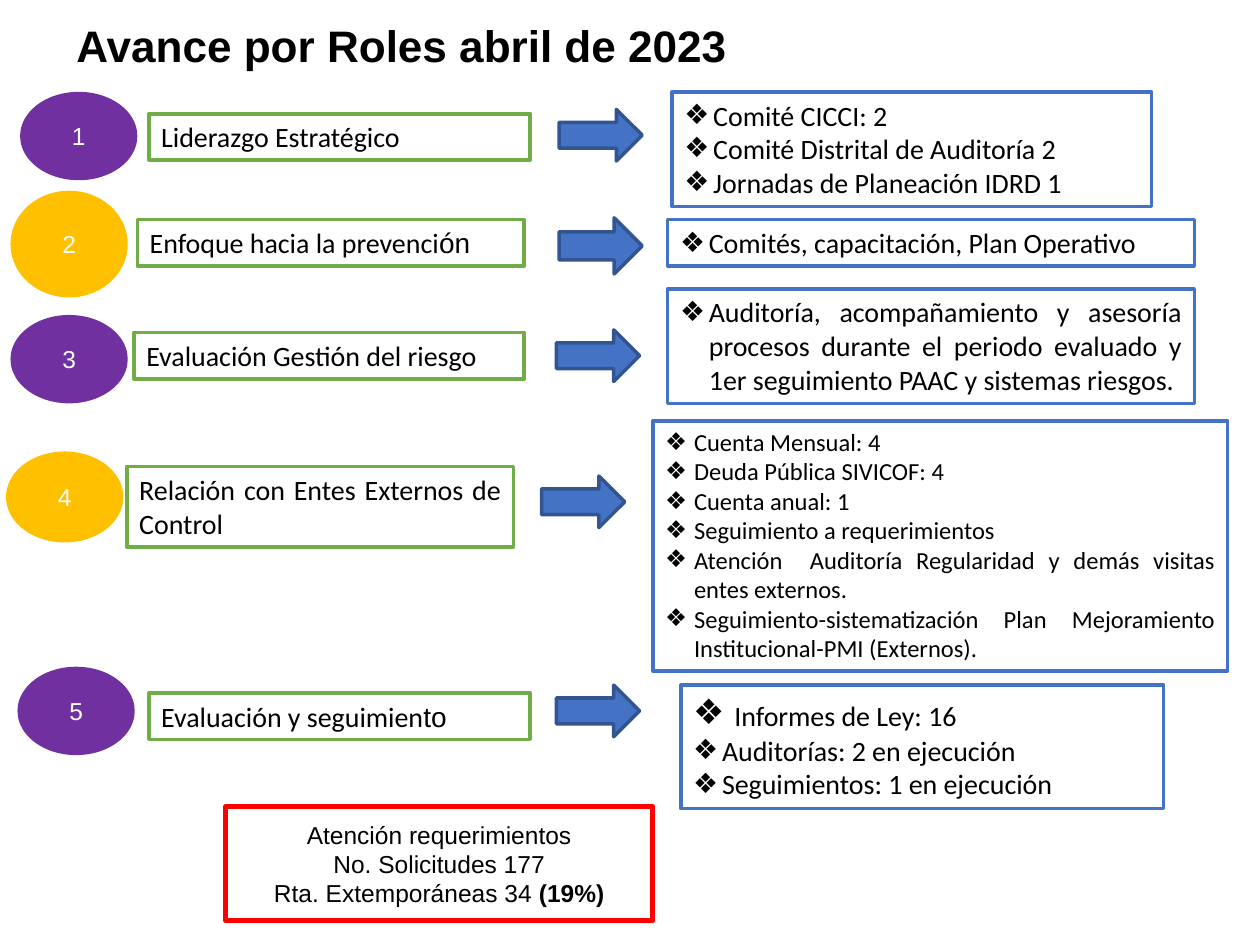
from lxml import etree
from pptx import Presentation
from pptx.dml.color import RGBColor
from pptx.enum.shapes import MSO_SHAPE
from pptx.enum.text import MSO_ANCHOR, MSO_AUTO_SIZE, PP_ALIGN
from pptx.oxml.ns import qn
from pptx.util import Pt

OVAL, RECT, ARROW = MSO_SHAPE.OVAL, MSO_SHAPE.RECTANGLE, MSO_SHAPE.RIGHT_ARROW
TOP, MIDDLE = MSO_ANCHOR.TOP, MSO_ANCHOR.MIDDLE
CENTER, JUSTIFY = PP_ALIGN.CENTER, PP_ALIGN.JUSTIFY

BLACK = RGBColor(0x00, 0x00, 0x00)
WHITE = RGBColor(0xFF, 0xFF, 0xFF)
PURPLE = RGBColor(0x70, 0x30, 0xA0)
GOLD = RGBColor(0xFF, 0xC0, 0x00)
GREEN = RGBColor(0x70, 0xAD, 0x47)
BLUE = RGBColor(0x44, 0x72, 0xC4)
NAVY = RGBColor(0x32, 0x54, 0x91)
RED = RGBColor(0xFF, 0x00, 0x00)

# Content: a paragraph is a string, or a list of (text, font changes) runs
TITLE = "Avance por Roles abril de 2023"
ARIAL = {"name": "Arial"}
ROLES = [
    {"oval": (11.5, 52.5, 67, 50.5), "box": (85, 65, 218, 26.5),
     "arrow": (319.5, 62.5, 47.5, 29.5), "list": (384, 52.5, 274, 65.5),
     "role": "Liderazgo Estratégico", "size": 16,
     "items": ["Comité CICCI: 2", "Comité Distrital de Auditoría 2",
               "Jornadas de Planeación IDRD 1"]},
    {"oval": (6, 109, 67, 61), "box": (78.5, 125.5, 221, 26.5),
     "arrow": (319.5, 124.5, 47.5, 32), "list": (381.5, 125.5, 301, 26.5),
     "role": [("Enfoque hacia la prevenci", {}), ("ón", ARIAL)], "size": 16,
     "items": ["Comités, capacitación, Plan Operativo"]},
    {"oval": (6, 180, 67, 50.5), "box": (76.5, 190, 223, 26.5),
     "arrow": (318, 188.5, 47.5, 29.5), "list": (381.5, 165, 301, 65.5),
     "role": "Evaluación Gestión del riesgo", "size": 16,
     "items": ["Auditoría, acompañamiento y asesoría procesos durante el "
               "periodo evaluado y 1er seguimiento PAAC y sistemas riesgos."]},
    {"oval": (3.5, 258, 67, 52), "box": (72.5, 266.5, 221, 46),
     "arrow": (309.5, 272, 47.5, 29.5), "list": (373, 240.5, 328.5, 143),
     "role": "Relación con Entes Externos de Control", "size": 14,
     "items": ["Cuenta Mensual: 4", "Deuda Pública SIVICOF: 4",
               "Cuenta anual: 1", "Seguimiento a requerimientos",
               "Atención  Auditoría Regularidad y demás visitas entes externos.",
               "Seguimiento-sistematización Plan Mejoramiento "
               "Institucional-PMI (Externos)."]},
    {"oval": (10, 381, 67, 50.5), "box": (85, 396, 218, 26.5),
     "arrow": (318, 391.5, 47.5, 29.5), "list": (389, 391.5, 276, 70.5),
     "role": [("Evaluación y seguimien", {}), ("to", ARIAL)], "size": 16,
     "items": [[(" ", {"name": "Arial", "size": Pt(20)}),
                ("Informes de Ley: 16", {})],
               "Auditorías: 2 en ejecución", "Seguimientos: 1 en ejecución"]},
]
TOTAL = ["Atención requerimientos", "No. Solicitudes 177",
         [("Rta. Extemporáneas 34 ", {}), ("(19%)", {"bold": True})]]
HANG = Pt(16.5)


def bullet(para):
    props = para._p.get_or_add_pPr()
    props.set("marL", str(HANG))
    props.set("indent", str(-HANG))
    etree.SubElement(props, qn("a:buFont")).set("typeface", "Arial")
    etree.SubElement(props, qn("a:buChar")).set("char", "❖")


def write(frame, paras, font, size, color, align, anchor, marked=False):
    frame.word_wrap = True
    frame.vertical_anchor = anchor
    for i, runs in enumerate(paras):
        para = frame.paragraphs[0] if i == 0 else frame.add_paragraph()
        para.alignment = align
        if marked:
            bullet(para)
        para.font.name, para.font.size = font, Pt(size)
        para.font.color.rgb = color
        for text, changes in [(runs, {})] if isinstance(runs, str) else runs:
            run = para.add_run()
            run.text = text
            for key, value in changes.items():
                setattr(run.font, key, value)


def draw(kind, place, fill=None, line=None, width=2):
    shape = slide.shapes.add_shape(kind, *map(Pt, place))
    shape.shadow.inherit = False
    if fill is None:
        shape.fill.background()
    else:
        shape.fill.solid()
        shape.fill.fore_color.rgb = fill
    if line is None:
        shape.line.fill.background()
    else:
        shape.line.color.rgb = line
        shape.line.width = Pt(width)
    return shape


deck = Presentation()
deck.slide_width, deck.slide_height = Pt(720), Pt(540)
slide = deck.slides.add_slide(deck.slide_layouts[5])

# Title
head = slide.shapes.title
head.left, head.top, head.width, head.height = map(Pt, (7, 11.5, 445, 32))
write(head.text_frame, [TITLE], "Arial", 25.2, BLACK, CENTER, MIDDLE)
head.text_frame.auto_size = MSO_AUTO_SIZE.NONE
head.text_frame.paragraphs[0].font.bold = True
head.text_frame.paragraphs[0].line_spacing = 0.9

# One row per role: number, name, arrow, results
for num, row in enumerate(ROLES, 1):
    oval = draw(OVAL, row["oval"], PURPLE if num % 2 else GOLD)
    write(oval.text_frame, [str(num)], "Arial", 14, WHITE, CENTER, MIDDLE)
    box = draw(RECT, row["box"], WHITE, GREEN)
    write(box.text_frame, [row["role"]], "Calibri", 16, BLACK, JUSTIFY, TOP)
    draw(ARROW, row["arrow"], BLUE, NAVY)
    card = draw(RECT, row["list"], WHITE, BLUE)
    write(card.text_frame, row["items"], "Calibri", row["size"], BLACK,
          JUSTIFY, TOP, marked=True)

# Summary of requests
total = draw(RECT, (129, 461, 244, 65), line=RED, width=3)
write(total.text_frame, TOTAL, "Arial", 14, BLACK, CENTER, MIDDLE)

deck.save("out.pptx")
